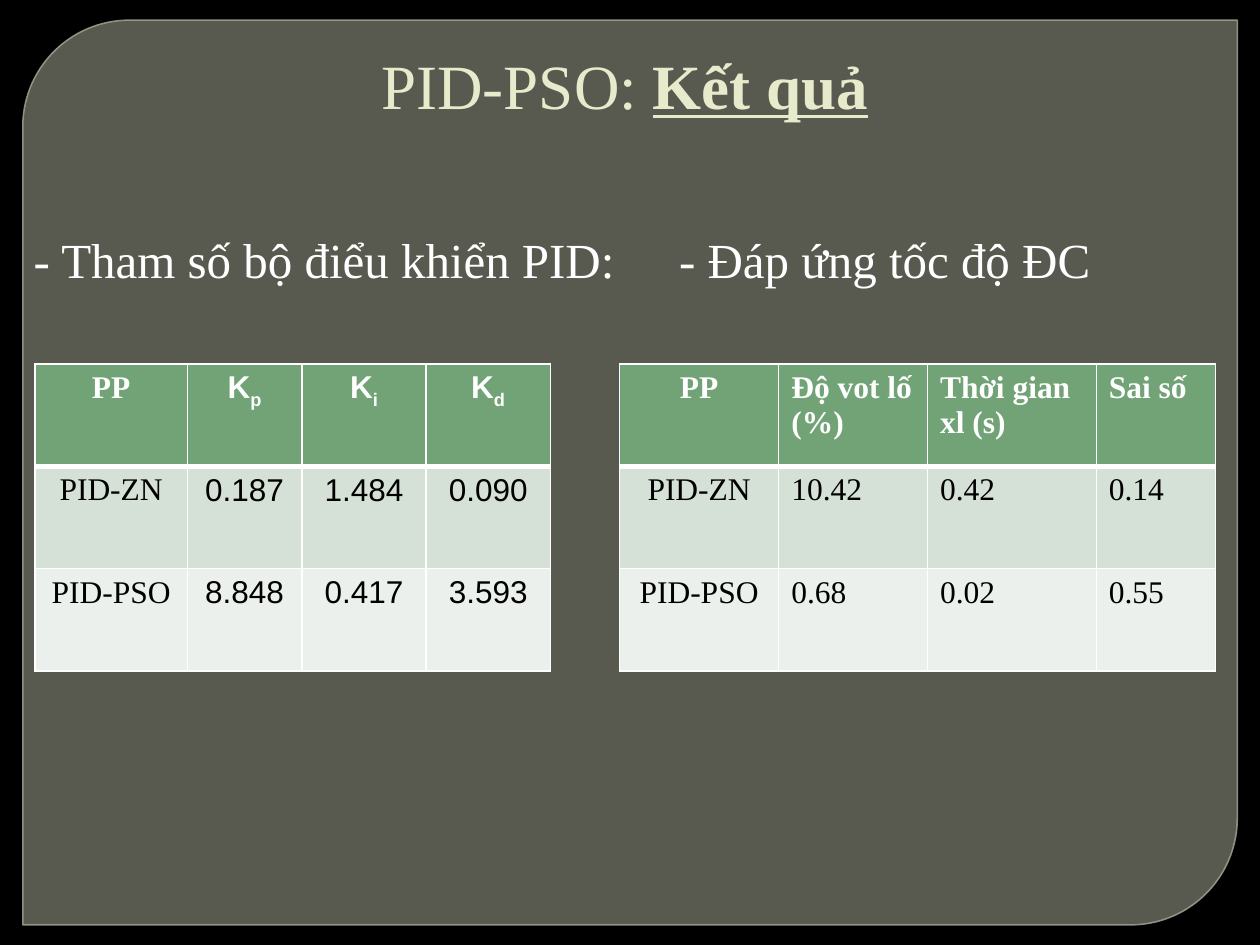
import pptx
import pptx.dml.color
import pptx.enum.shapes
import pptx.enum.text
import pptx.oxml
import pptx.oxml.ns
import pptx.util
from pptx.util import Pt

RGBColor = pptx.dml.color.RGBColor
ALIGN = pptx.enum.text.PP_ALIGN
BLACK = RGBColor(0x00, 0x00, 0x00)
WHITE = RGBColor(0xFF, 0xFF, 0xFF)
PANEL = RGBColor(0x88, 0x8B, 0x7B)
PANEL_LINE = RGBColor(0x9D, 0xA0, 0x90)
TITLE = RGBColor(0xE7, 0xEA, 0xCB)
HEADER = RGBColor(0x72, 0xA3, 0x76)
BANDS = (RGBColor(0xD5, 0xE0, 0xD6), RGBColor(0xEB, 0xF0, 0xEC))
SERIF = "Times New Roman"
SANS = "Arial"
ROW_HEIGHT = 58.5


def set_font(font, size, color, name=SERIF, bold=False):
    font.size = Pt(size)
    font.color.rgb = color
    font.name = name
    font.bold = bold


def set_opacity(color_format_owner, percent):
    """Make the solid colour of a fill or line element partly transparent."""
    color = color_format_owner.find(".//" + pptx.oxml.ns.qn("a:srgbClr"))
    color.append(pptx.oxml.parse_xml(
        f'<a:alpha {pptx.oxml.ns.nsdecls("a")} val="{percent * 1000}"/>'))


def add_panel(slide, left, top, width, height):
    panel = slide.shapes.add_shape(
        pptx.enum.shapes.MSO_SHAPE.ROUND_2_DIAG_RECTANGLE,
        Pt(left), Pt(top), Pt(width), Pt(height))
    panel.adjustments[0] = 0.118
    panel.adjustments[1] = 0
    panel.shadow.inherit = False
    panel.fill.solid()
    panel.fill.fore_color.rgb = PANEL
    panel.line.color.rgb = PANEL_LINE
    panel.line.width = Pt(0.87)
    properties = panel._element.spPr
    set_opacity(properties.find(pptx.oxml.ns.qn("a:solidFill")), 65)
    set_opacity(properties.find(pptx.oxml.ns.qn("a:ln")), 88)
    slide.shapes._spTree.insert(2, panel._element)  # behind the title


def place_title(slide, left, top, width, height):
    title = slide.shapes.title
    title.left, title.top = Pt(left), Pt(top)
    title.width, title.height = Pt(width), Pt(height)
    frame = title.text_frame
    frame.vertical_anchor = pptx.enum.text.MSO_ANCHOR.BOTTOM
    paragraph = frame.paragraphs[0]
    paragraph.alignment = ALIGN.CENTER
    paragraph._p.get_or_add_pPr().set("marL", str(Pt(4)))
    set_font(paragraph.font, 36, TITLE)
    paragraph.add_run().text = "PID-PSO: "
    result = paragraph.add_run()
    result.text = "Kết quả"
    result.font.bold = True
    result.font.underline = True


def add_heading(slide, text, left, top, width, height):
    frame = slide.shapes.add_textbox(
        Pt(left), Pt(top), Pt(width), Pt(height)).text_frame
    frame.word_wrap = True
    paragraph = frame.paragraphs[0]
    paragraph.text = text
    paragraph.line_spacing = 1.5
    paragraph.space_after = Pt(12)
    set_font(paragraph.font, 28, WHITE)


def add_borders(cell, top, bottom):
    """Draw white borders; top and bottom are widths in points."""
    properties = cell._tc.get_or_add_tcPr()
    for side, width in (("L", 1), ("R", 1), ("T", top), ("B", bottom)):
        properties.append(pptx.oxml.parse_xml(
            f'<a:ln{side} {pptx.oxml.ns.nsdecls("a")} w="{Pt(width)}">'
            f'<a:solidFill><a:srgbClr val="{WHITE}"/></a:solidFill>'
            f'</a:ln{side}>'))


def fill_cell(cell, text, row, font_name, alignment):
    """Format one cell; text after an underscore becomes a subscript."""
    is_header = row == 0
    add_borders(cell, 3 if row == 1 else 1, 3 if is_header else 1)
    cell.fill.solid()
    cell.fill.fore_color.rgb = HEADER if is_header else BANDS[(row - 1) % 2]
    paragraph = cell.text_frame.paragraphs[0]
    paragraph.alignment = alignment
    set_font(paragraph.font, 18, WHITE if is_header else BLACK,
             font_name, is_header)
    base, _, subscript = text.partition("_")
    paragraph.add_run().text = base
    if subscript:
        run = paragraph.add_run()
        run.text = subscript
        run._r.get_or_add_rPr().set("baseline", "-25000")


def add_results(slide, rows, left, top, column_widths, value_font, value_alignment):
    table = slide.shapes.add_table(
        len(rows), len(column_widths), Pt(left), Pt(top),
        Pt(sum(column_widths)), Pt(ROW_HEIGHT * len(rows))).table
    for column, width in zip(table.columns, column_widths):
        column.width = Pt(width)
    for row, values in enumerate(rows):
        table.rows[row].height = Pt(ROW_HEIGHT)
        for column, text in enumerate(values):
            is_label = column == 0
            fill_cell(table.cell(row, column), text, row,
                      SERIF if is_label else value_font,
                      ALIGN.CENTER if is_label else value_alignment)


def main():
    presentation = pptx.Presentation()
    presentation.slide_width = Pt(720)
    presentation.slide_height = Pt(540)
    slide = presentation.slides.add_slide(presentation.slide_layouts[5])
    slide.background.fill.solid()
    slide.background.fill.fore_color.rgb = BLACK

    add_panel(slide, 13, 11.5, 694, 517)
    place_title(slide, 31, 6.5, 648, 67)
    add_heading(slide, "- Tham số bộ điểu khiển PID:", 12.2, 111, 366.5, 67)
    add_results(slide, (
        ("PP", "K_p", "K_i", "K_d"),
        ("PID-ZN", "0.187", "1.484", "0.090"),
        ("PID-PSO", "8.848", "0.417", "3.593"),
    ), 20, 208, (87, 65.5, 71, 71), SANS, ALIGN.CENTER)
    add_heading(slide, "- Đáp ứng tốc độ ĐC", 381, 111, 263, 67)
    add_results(slide, (
        ("PP", "Độ vot lố (%)", "Thời gian xl (s)", "Sai số"),
        ("PID-ZN", "10.42", "0.42", "0.14"),
        ("PID-PSO", "0.68", "0.02", "0.55"),
    ), 354, 208, (91, 85, 96.5, 68), SERIF, ALIGN.LEFT)
    presentation.save("out.pptx")


if __name__ == "__main__":
    main()
